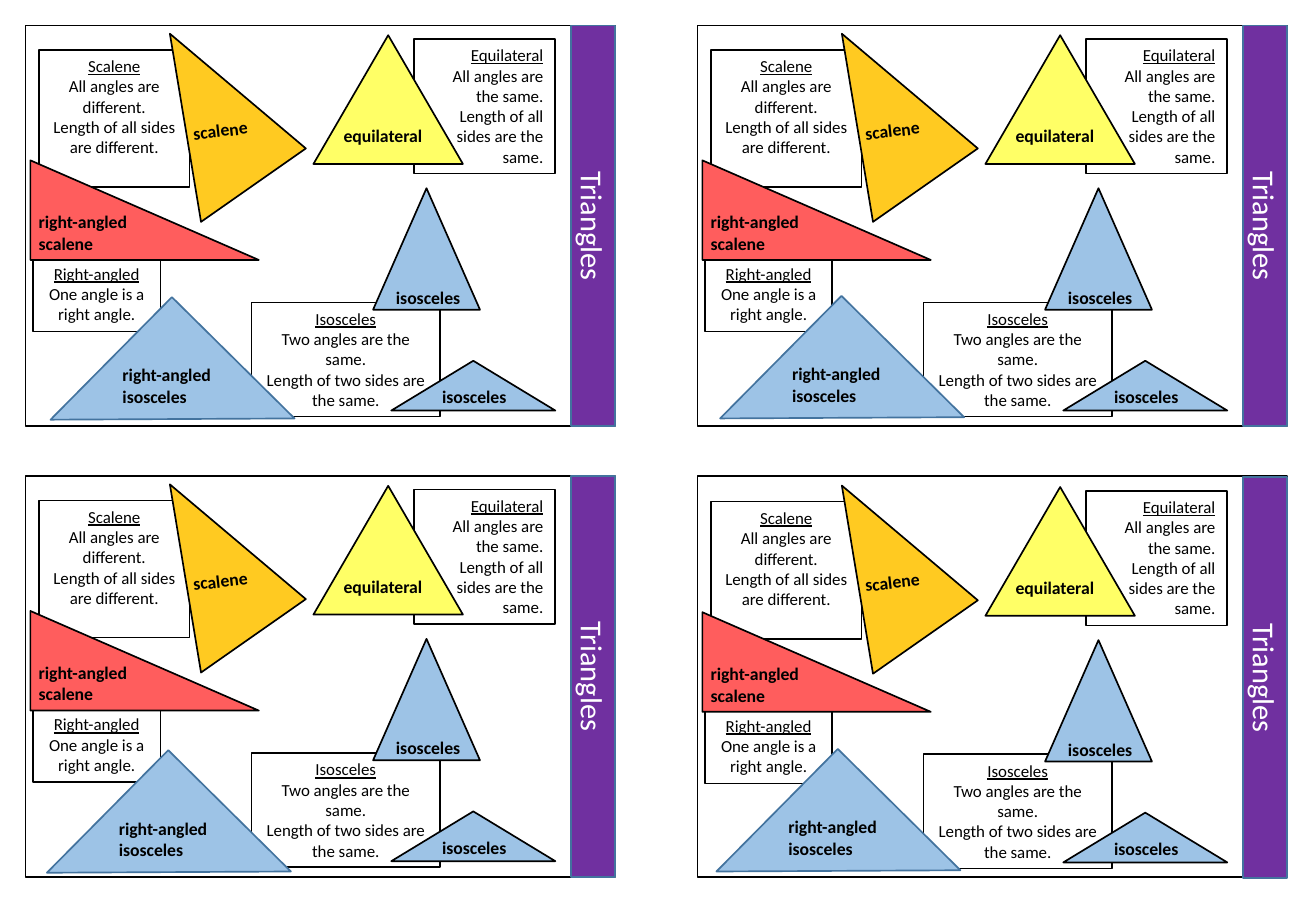
from pptx import Presentation
from pptx import util as u
from pptx.dml.color import RGBColor
from pptx.enum import shapes, text

COLUMNS, ROWS = 485, 330  # grid of one card
CARD_WIDTH, CARD_HEIGHT = 4.85, 3.3
LEFT, TOP, COLUMN_STEP, ROW_STEP = 0.21, 0.21, 5.53, 3.71
BLACK, WHITE, PURPLE, BLUE, EDGE = "000000", "FFFFFF", "7030A0", "9DC3E6", "43739E"
RECTANGLE = shapes.MSO_SHAPE.RECTANGLE
TRIANGLE = shapes.MSO_SHAPE.ISOSCELES_TRIANGLE
RIGHT_TRIANGLE = shapes.MSO_SHAPE.RIGHT_TRIANGLE
CENTER, RIGHT = text.PP_ALIGN.CENTER, text.PP_ALIGN.RIGHT

# Card column and row, drop of its contents, grid cell of its right-angled isosceles
CARDS = [
    (0, 0, 0, (50, 253)),
    (1, 0, 0, (48, 252)),
    (0, 1, 0, (47, 255)),
    (1, 1, 0.01, (45, 253)),
]

# Each family: its note, then its triangles with their labels
FAMILIES = [
    (((11, 20, 124, 113), CENTER,
      ["Scalene", "All angles are different.", "Length of all sides are different."]),
     [(TRIANGLE, (100, 29, 157, 95), 80.6, "FFCA21", (128, 72, 70, 28), -6.4, ["scalene"])]),
    (((320, 11, 116, 111), RIGHT,
      ["Equilateral", "All angles are the same.", "Length of all sides are the same."]),
     [(TRIANGLE, (237, 8, 123, 106), 0, "FFFF66", (252, 77, 94, 28), 0, ["equilateral"])]),
    (((186, 228, 155, 94), CENTER,
      ["Isosceles", "Two angles are the same.", "Length of two sides are the same."]),
     [(TRIANGLE, (286, 134, 88, 100), 0, BLUE, (295, 210, 79, 20), 0, ["isosceles"]),
      (TRIANGLE, (301, 276, 135, 41), 0, BLUE, (333, 292, 73, 39), 0, ["isosceles"])]),
    (((6, 191, 105, 61), CENTER, ["Right-angled", "One angle is a right angle."]),
     [(RIGHT_TRIANGLE, (4, 111, 188, 82), 0, "FF5D5D",
       (1, 148, 107, 45), 0, ["right-angled", "scalene"])]),
]


def color(value):
    return RGBColor.from_string(value)


def place(box, cells):
    """Turn grid cells of a card into lengths on the page."""
    left, top, width, height = box
    column, row, columns, rows = cells
    across, down = width / COLUMNS, height / ROWS
    return [u.Inches(length) for length in (
        left + column * across, top + row * down, columns * across, rows * down)]


def add_outline(parent, kind, box, cells, fill=None, line=BLACK, rotation=0):
    shape = parent.shapes.add_shape(kind, *place(box, cells))
    shape.shadow.inherit = False
    shape.rotation = rotation
    if fill:
        shape.fill.solid()
        shape.fill.fore_color.rgb = color(fill)
    else:
        shape.fill.background()
    shape.line.color.rgb = color(line)
    shape.line.width = u.Pt(1)
    return shape


def write(shape, lines, align, font_color=BLACK, heading=False, **font):
    """Write one paragraph per line; a heading underlines the first."""
    frame = shape.text_frame
    for number, line in enumerate(lines):
        para = frame.add_paragraph() if number else frame.paragraphs[0]
        para.alignment = align
        span = para.add_run()
        span.text = line
        formats = {"name": "Calibri", "underline": heading and number == 0, **font}
        for name, value in formats.items():
            setattr(span.font, name, value)
        span.font.color.rgb = color(font_color)


def add_note(card, box, cells, align, lines):
    note = add_outline(card, RECTANGLE, box, cells)
    note.text_frame.word_wrap = True
    note.text_frame.vertical_anchor = text.MSO_ANCHOR.TOP
    write(note, lines, align, heading=True, size=u.Pt(10))


def add_label(card, box, cells, rotation, lines):
    label = card.shapes.add_textbox(*place(box, cells))
    label.rotation = rotation
    label.text_frame.word_wrap = False
    label.text_frame.auto_size = text.MSO_AUTO_SIZE.SHAPE_TO_FIT_TEXT
    write(label, lines, text.PP_ALIGN.LEFT, size=u.Pt(10.5), bold=True)


def add_title(card, box):
    title = add_outline(card, RECTANGLE, box, (302, 147, 330, 36), PURPLE, EDGE, 90)
    title.text_frame.vertical_anchor = text.MSO_ANCHOR.MIDDLE
    write(title, ["Triangles"], CENTER, WHITE, size=u.Pt(18))


def add_card(page, box, corner):
    card = page.shapes.add_group_shape()
    add_title(card, box)
    for note, triangles in FAMILIES:
        add_note(card, box, *note)
        for kind, cells, turn, fill, label_cells, label_turn, lines in triangles:
            triangle = add_outline(card, kind, box, cells, fill, rotation=turn)
            if lines == ["scalene"]:
                triangle.adjustments[0] = 0.71
            add_label(card, box, label_cells, label_turn, lines)
    column, row = corner
    add_outline(card, RIGHT_TRIANGLE, box, (column, row, 142, 142), BLUE, EDGE, 134.7)
    add_label(card, box, (column + 20, row + 21, 107, 45), 0, ["right-angled", "isosceles"])


def main():
    deck = Presentation()
    deck.slide_width, deck.slide_height = u.Inches(10.83), u.Inches(7.5)
    page = deck.slides.add_slide(deck.slide_layouts[6])
    boxes = [(LEFT + column * COLUMN_STEP, TOP + row * ROW_STEP, CARD_WIDTH, CARD_HEIGHT)
             for column, row, _, _ in CARDS]
    for box in boxes:
        add_outline(page, RECTANGLE, box, (0, 0, COLUMNS, ROWS), WHITE)
    for (left, top, width, height), (_, _, drop, corner) in zip(boxes, CARDS):
        add_card(page, (left, top + drop, width, height), corner)
    deck.save("out.pptx")


if __name__ == "__main__":
    main()
